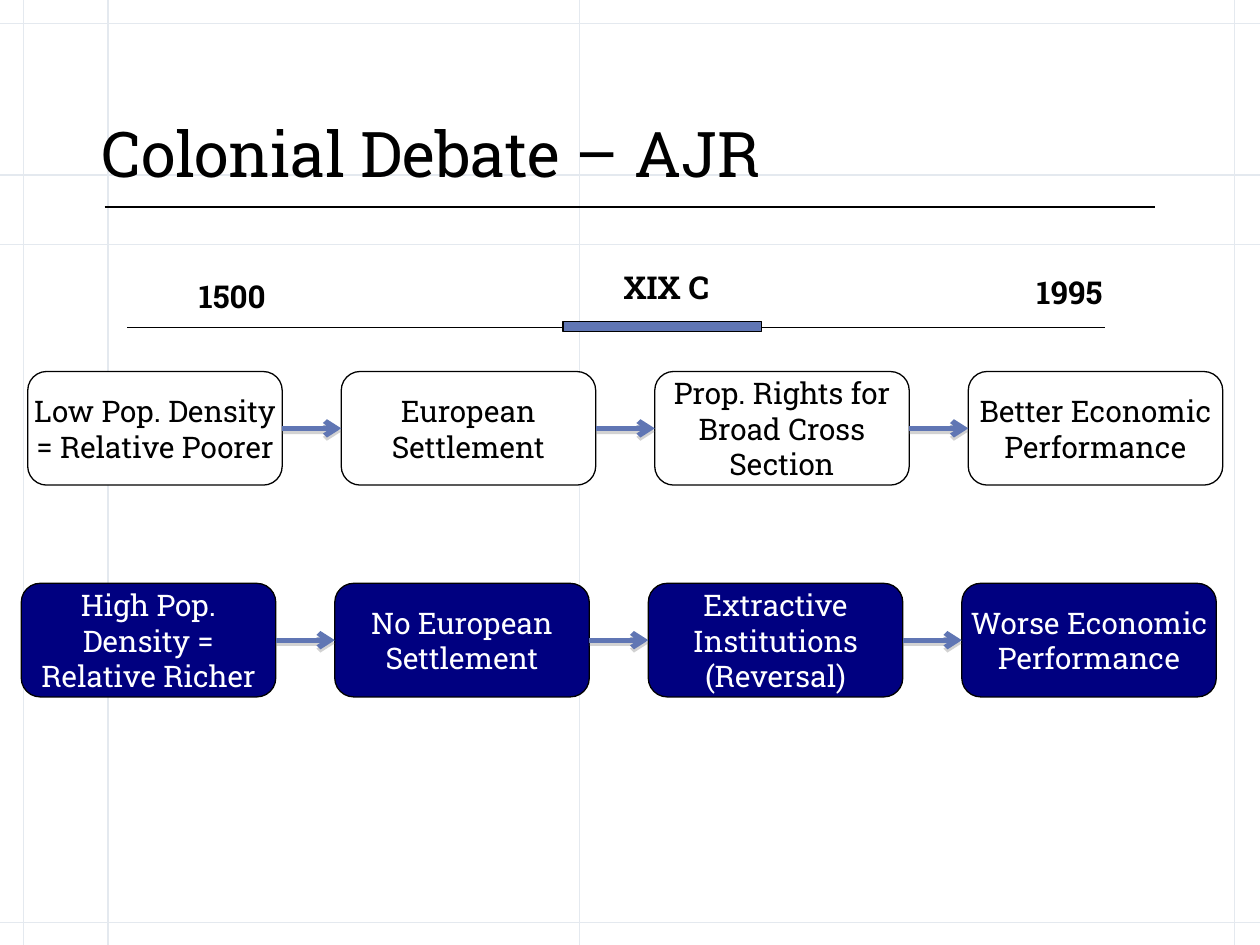
"""Build the Colonial Debate slide: a timeline above two causal chains."""
from lxml.etree import SubElement
from pptx import Presentation
from pptx.dml.color import RGBColor
from pptx.enum.shapes import MSO_CONNECTOR as Link, MSO_SHAPE as Shape
from pptx.enum.text import MSO_ANCHOR as Anchor, MSO_AUTO_SIZE as AutoSize, PP_ALIGN as Align
from pptx.oxml.ns import qn
from pptx.util import Cm, Pt


def paint(color_format, hex_color):
    """Set a solid colour from a hex string."""
    color_format.rgb = RGBColor.from_string(hex_color)


def draw_line(shapes, start, end, hex_color, width):
    """Add a straight line without shadow and return it with its effect list."""
    line = shapes.add_connector(Link.STRAIGHT, *(Cm(v) for v in (*start, *end)))
    paint(line.line.color, hex_color)
    line.line.width = Pt(width)
    return line, SubElement(line._element.spPr, qn("a:effectLst"))


BLACK, WHITE, NAVY, BLUE, GRID = "000000", "FFFFFF", "000080", "6076B4", "E4E9EF"
FONT = "Roboto Slab"
WIDTH, HEIGHT = 25.4, 19.05

deck = Presentation()
deck.slide_width, deck.slide_height = Cm(WIDTH), Cm(HEIGHT)
slide = deck.slides.add_slide(deck.slide_layouts[5])
shapes = slide.shapes

for y in (0.48, 3.53, 4.93, 18.59):
    draw_line(shapes, (0, y), (WIDTH, y), GRID, 0.75)
for x in (0.48, 2.18, 11.68, 24.89):
    draw_line(shapes, (x, 0), (x, HEIGHT), GRID, 0.75)
draw_line(shapes, (2.11, 4.17), (23.29, 4.17), BLACK, 0.75)

title = shapes.title
title.left, title.top, title.width, title.height = Cm(1.8), Cm(0.79), Cm(21.46), Cm(3.18)
title.text_frame.text = "Colonial Debate – AJR"
title.text_frame.auto_size = AutoSize.NONE
title.text_frame.vertical_anchor = Anchor.BOTTOM
heading = title.text_frame.paragraphs[0]
heading.alignment = Align.LEFT
for name, value in {"name": FONT, "size": Pt(36)}.items():
    setattr(heading.font, name, value)
paint(heading.font.color, BLACK)
title._element.getparent().append(title._element)

draw_line(shapes, (2.57, 6.6), (22.28, 6.6), BLACK, 0.75)
century = shapes.add_shape(Shape.RECTANGLE, Cm(11.35), Cm(6.48), Cm(4.01), Cm(0.2))
century.shadow.inherit = False
century.fill.solid()
paint(century.fill.fore_color, BLUE)
paint(century.line.color, BLACK)
century.line.width = Pt(0.75)

for date, left, top, width in (
    ("1500", 3.76, 5.46, 2.24),
    ("1995", 20.65, 5.38, 2.24),
    ("XIX C", 12.32, 5.28, 2.51),
):
    label = shapes.add_textbox(Cm(left), Cm(top), Cm(width), Cm(1.02))
    label.text_frame.text = date
    label_font = label.text_frame.paragraphs[0].font
    for name, value in {"name": FONT, "size": Pt(18), "bold": True}.items():
        setattr(label_font, name, value)
    paint(label_font.color, BLACK)

STEP_WIDTH, STEP_HEIGHT, PITCH = 5.13, 2.29, 6.32
STEP_FRAME = {"margin_left": 0, "margin_right": 0, "margin_top": 0, "margin_bottom": 0,
              "word_wrap": True, "vertical_anchor": Anchor.MIDDLE}
STEP_FONT = {"name": FONT, "size": Pt(17)}
CHAINS = (
    (0.56, 7.49, WHITE, BLACK, (
        "Low Pop. Density = Relative Poorer", "European Settlement",
        "Prop. Rights for Broad Cross Section", "Better Economic Performance")),
    (0.43, 11.76, NAVY, WHITE, (
        "High Pop. Density = Relative Richer", "No European Settlement",
        "Extractive Institutions (Reversal)", "Worse Economic Performance")),
)

for left, top, fill_color, text_color, steps in CHAINS:
    previous = None
    for column, wording in enumerate(steps):
        step = shapes.add_shape(Shape.ROUNDED_RECTANGLE, Cm(left + column * PITCH), Cm(top),
                                Cm(STEP_WIDTH), Cm(STEP_HEIGHT))
        step.shadow.inherit = False
        step.fill.solid()
        paint(step.fill.fore_color, fill_color)
        paint(step.line.color, BLACK)
        step.line.width = Pt(0.75)
        step.text_frame.text = wording
        for name, value in STEP_FRAME.items():
            setattr(step.text_frame, name, value)
        paragraph = step.text_frame.paragraphs[0]
        paragraph.alignment = Align.CENTER
        for name, value in STEP_FONT.items():
            setattr(paragraph.font, name, value)
        paint(paragraph.font.color, text_color)

        if previous is not None:
            arrow, effects = draw_line(shapes, (0, 0), (0, 0), BLUE, 3)
            arrow.begin_connect(previous, 3)
            arrow.end_connect(step, 1)
            SubElement(arrow.line._get_or_add_ln(), qn("a:tailEnd"), type="arrow")
            shadow = SubElement(effects, qn("a:outerShdw"), blurRad="0", dist=str(Pt(1.8)),
                                dir="5400000", rotWithShape="0")
            shade = SubElement(shadow, qn("a:srgbClr"), val="808080")
            SubElement(shade, qn("a:alpha"), val="35000")
        previous = step

deck.save("out.pptx")
